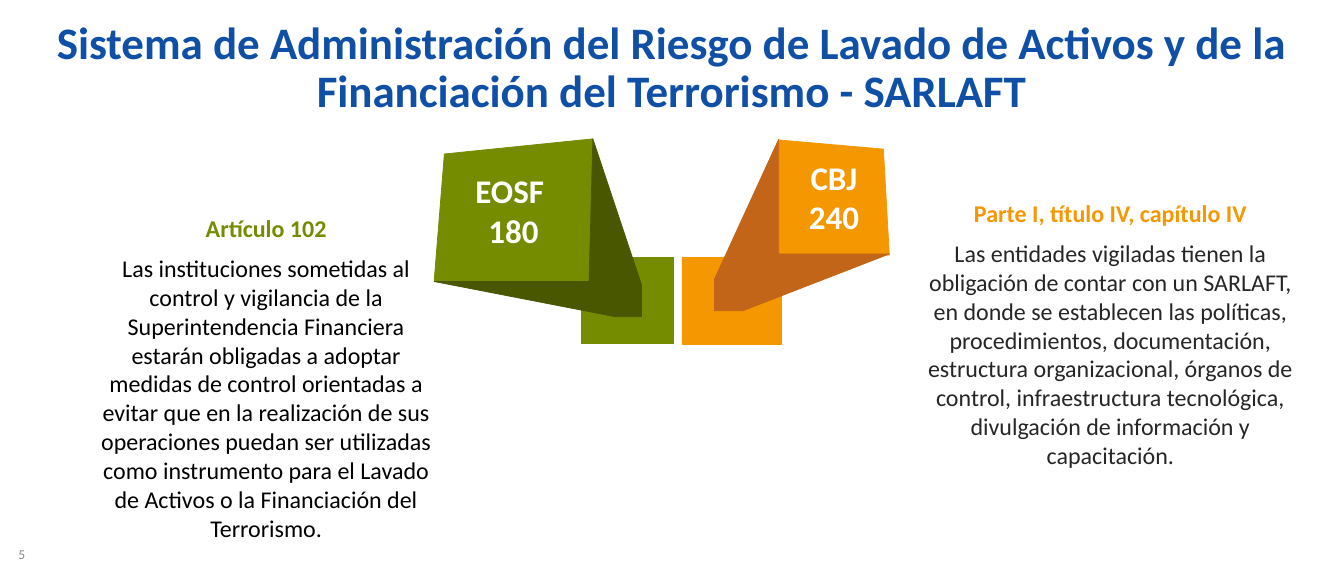
from dataclasses import dataclass

from pptx import Presentation
from pptx.dml.color import RGBColor
from pptx.enum.shapes import MSO_SHAPE
from pptx.enum.text import MSO_ANCHOR, MSO_AUTO_SIZE, PP_ALIGN
from pptx.oxml.ns import qn
from pptx.shapes.base import BaseShape
from pptx.shapes.group import GroupShape
from pptx.text.text import TextFrame, _Paragraph
from pptx.util import Inches, Pt

RECTANGLE = MSO_SHAPE.RECTANGLE
CENTER, LEFT = PP_ALIGN.CENTER, PP_ALIGN.LEFT
TOP, MIDDLE = MSO_ANCHOR.TOP, MSO_ANCHOR.MIDDLE
NO_AUTOFIT = MSO_AUTO_SIZE.NONE

BLUE, GREEN, DARK_GREEN = "0F4FA6", "758B00", "495800"
ORANGE, DARK_ORANGE = "F59700", "C36518"
WHITE, BLACK, CHARCOAL, GRAY = "FFFFFF", "000000", "262626", "8C8C8C"

Box = tuple[float, float, float, float]
Points = list[tuple[float, float]]


@dataclass
class Line:
    text: str
    size: float
    color: str
    bold: bool = False
    align: PP_ALIGN = CENTER
    space_before: float = 0
    line_spacing: float = 1.0


@dataclass
class Ribbon:
    """A folded banner: square base, front face, side and bottom folds."""
    color: str
    fold_color: str
    base: Box
    face: Points
    side: Points
    bottom: Points
    label_box: Box
    label: list[str]


@dataclass
class Article:
    box: Box
    inset: float
    heading: str
    heading_color: str
    body: str
    body_color: str


RIBBONS = [
    Ribbon(GREEN, DARK_GREEN, (10.76, 4.76, 1.72, 1.6),
           [(10.98, 2.57), (10.91, 5.21), (8.04, 5.21), (8.23, 2.85)],
           [(10.98, 2.57), (11.88, 5.27), (11.88, 5.86), (10.91, 5.21)],
           [(8.04, 5.21), (10.91, 5.21), (11.88, 5.86), (11.39, 5.86)],
           (8.04, 3.04, 2.94, 1.7), ["EOSF ", "180"]),
    Ribbon(ORANGE, DARK_ORANGE, (12.63, 4.77, 1.85, 1.6),
           [(14.42, 2.59), (16.36, 2.76), (16.47, 4.72), (14.42, 4.72)],
           [(14.42, 2.58), (14.42, 4.7), (13.23, 5.75), (13.23, 5.17)],
           [(14.42, 4.7), (16.47, 4.7), (13.76, 5.75), (13.23, 5.75)],
           (14.42, 2.85, 2.05, 1.58), ["CBJ", "240"]),
]

ARTICLES = [
    Article((1.56, 3.9, 6.74, 6.3), 0.25, "Artículo 102", GREEN,
            "Las instituciones sometidas al control y vigilancia de la "
            "Superintendencia Financiera estarán obligadas a adoptar medidas de "
            "control orientadas a evitar que en la realización de sus operaciones "
            "puedan ser utilizadas como instrumento para el Lavado de Activos o "
            "la Financiación del Terrorismo.", BLACK),
    Article((17.07, 3.62, 6.99, 5.4), 0.1, "Parte I, título IV, capítulo IV", ORANGE,
            "Las entidades vigiladas tienen la obligación de contar con un "
            "SARLAFT, en donde se establecen las políticas, procedimientos, "
            "documentación, estructura organizacional, órganos de control, "
            "infraestructura tecnológica, divulgación de información y "
            "capacitación.", CHARCOAL),
]


def rgb(color: str) -> RGBColor:
    return RGBColor.from_string(color)


def place(shape: BaseShape, box: Box) -> None:
    for side, length in zip(("left", "top", "width", "height"), box):
        setattr(shape, side, Inches(length))


def remove_bullet(paragraph: _Paragraph) -> None:
    properties = paragraph._p.get_or_add_pPr()
    properties.set("marL", "0")
    properties.set("indent", "0")
    properties.append(properties.makeelement(qn("a:buNone"), {}))


def write(frame: TextFrame, lines: list[Line], anchor: MSO_ANCHOR,
          inset_x: float = 0.1, inset_y: float = 0.05) -> None:
    frame_format = {
        "word_wrap": True, "auto_size": NO_AUTOFIT, "vertical_anchor": anchor,
        "margin_left": Inches(inset_x), "margin_right": Inches(inset_x),
        "margin_top": Inches(inset_y), "margin_bottom": Inches(inset_y),
    }
    for name, value in frame_format.items():
        setattr(frame, name, value)
    for index, line in enumerate(lines):
        paragraph = frame.add_paragraph() if index else frame.paragraphs[0]
        remove_bullet(paragraph)
        paragraph.alignment = line.align
        paragraph.line_spacing = line.line_spacing
        paragraph.space_before = Pt(line.space_before)
        run = paragraph.add_run()
        run.text = line.text
        font_format = {"name": "Calibri", "size": Pt(line.size), "bold": line.bold}
        for name, value in font_format.items():
            setattr(run.font, name, value)
        run.font.color.rgb = rgb(line.color)


def paint(shape: BaseShape, color: str) -> None:
    shape.shadow.inherit = False
    shape.fill.solid()
    shape.fill.fore_color.rgb = rgb(color)
    shape.line.color.rgb = rgb(color)
    shape.line.width = Pt(1)


def add_panel(group: GroupShape, points: Points, color: str) -> None:
    start, *others = [(Inches(x), Inches(y)) for x, y in points]
    builder = group.shapes.build_freeform(*start)
    builder.add_line_segments(others, close=True)
    paint(builder.convert_to_shape(), color)


def add_ribbon(slide, ribbon: Ribbon) -> None:
    group = slide.shapes.add_group_shape()
    base = group.shapes.add_shape(RECTANGLE, *map(Inches, ribbon.base))
    paint(base, ribbon.color)
    add_panel(group, ribbon.face, ribbon.color)
    for fold in (ribbon.side, ribbon.bottom):
        add_panel(group, fold, ribbon.fold_color)
    label = group.shapes.add_textbox(*map(Inches, ribbon.label_box))
    write(label.text_frame, [Line(text, 44, WHITE, True) for text in ribbon.label],
          MIDDLE, 0.07, 0.07)


def main() -> None:
    deck = Presentation()
    deck.slide_width, deck.slide_height = Inches(24.89), Inches(10.66)
    slide = deck.slides.add_slide(deck.slide_layouts.get_by_name("Two Content"))

    title = slide.shapes.title
    place(title, (0.01, 0, 24.86, 2.55))
    write(title.text_frame,
          [Line("Sistema de Administración del Riesgo de Lavado de Activos y de la "
                "Financiación del Terrorismo - SARLAFT", 60, BLUE, True,
                line_spacing=0.9)], MIDDLE)

    for ribbon in RIBBONS:
        add_ribbon(slide, ribbon)

    for index, article in enumerate(ARTICLES, start=1):
        body = slide.placeholders[index]
        place(body, article.box)
        write(body.text_frame,
              [Line(article.heading, 32, article.heading_color, True),
               Line(article.body, 32, article.body_color, space_before=15.2)],
              TOP, article.inset)

    page_number = slide.shapes.add_textbox(*map(Inches, (0.24, 9.87, 5.6, 0.75)))
    write(page_number.text_frame, [Line("5", 18, GRAY, align=LEFT)], MIDDLE)

    deck.save("out.pptx")


if __name__ == "__main__":
    main()
